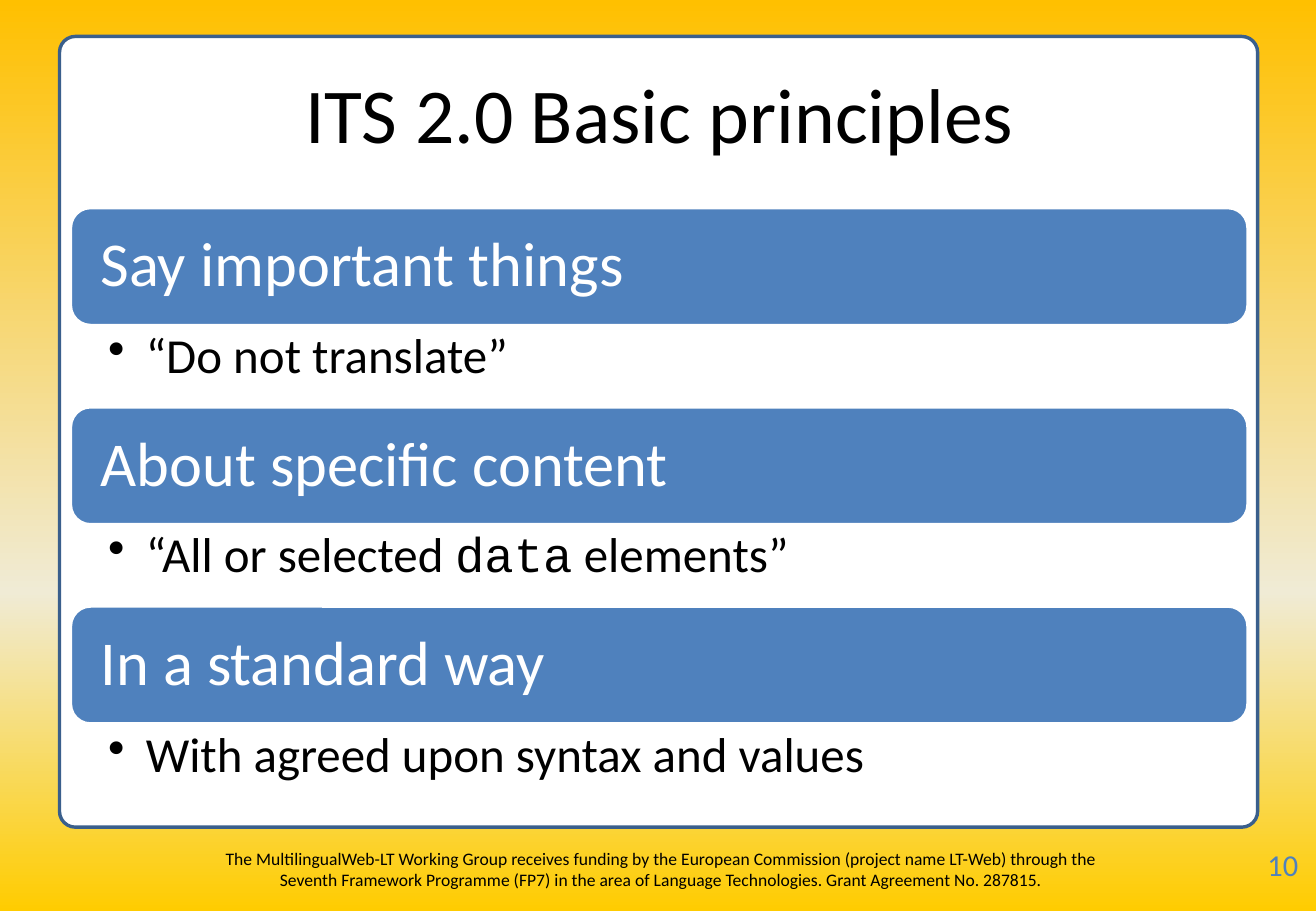
from lxml import etree
from pptx import Presentation
from pptx.dml.color import RGBColor
from pptx.enum.shapes import MSO_SHAPE
from pptx.enum.text import MSO_ANCHOR, PP_ALIGN
from pptx.oxml.ns import qn
from pptx.util import Pt

EMU_PER_PX = 9144
ROUNDED = MSO_SHAPE.ROUNDED_RECTANGLE
TOP, MIDDLE = MSO_ANCHOR.TOP, MSO_ANCHOR.MIDDLE
LEFT, CENTER = PP_ALIGN.LEFT, PP_ALIGN.CENTER
BODY_FONT, CODE_FONT = "Calibri", "Courier New"
COLORS = {
    "amber": "FFC000", "cream": "F0EBD5", "gold": "FFCC00", "white": "FFFFFF",
    "black": "000000", "blue": "4F81BD", "navy": "3A5F8C",
}
BACKGROUND_STOPS = [(0, "amber"), (65, "cream"), (100, "gold")]
FUNDING = (
    "The MultilingualWeb-LT Working Group receives funding by the European Commission "
    "(project name LT-Web) through the Seventh Framework Programme (FP7) in the area of "
    "Language Technologies. Grant Agreement No. 287815."
)
PRINCIPLES = [
    ("Say important things", [("“Do not translate”", BODY_FONT)]),
    ("About specific content", [
        ("“All or selected ", BODY_FONT), ("data", CODE_FONT), (" elements”", BODY_FONT),
    ]),
    ("In a standard way", [("With agreed upon syntax and values", BODY_FONT)]),
]


def px(length):
    """Turn px into EMU."""
    return length * EMU_PER_PX


def rgb(name):
    """Look up a named colour."""
    return RGBColor.from_string(COLORS[name])


def write_text(shape, runs, size, color="black", align=LEFT, anchor=TOP,
               insets=(10, 5, 10, 5), line_spacing=None, bullet_indent=0):
    """Fill a shape with one paragraph of (text, font) runs, or a plain string."""
    frame = shape.text_frame
    frame.word_wrap = True
    frame.vertical_anchor = anchor
    (frame.margin_left, frame.margin_top,
     frame.margin_right, frame.margin_bottom) = map(px, insets)
    paragraph = frame.paragraphs[0]
    paragraph.alignment = align
    if line_spacing:
        paragraph.line_spacing = line_spacing
    if bullet_indent:
        properties = paragraph._p.get_or_add_pPr()
        properties.set("marL", str(px(bullet_indent)))
        properties.set("indent", str(-px(bullet_indent)))
        etree.SubElement(properties, qn("a:buChar")).set("char", "•")
    if isinstance(runs, str):
        runs = [(runs, BODY_FONT)]
    for text, font_name in runs:
        run = paragraph.add_run()
        run.text = text
        run.font.name = font_name
        run.font.size = Pt(size)
        run.font.color.rgb = rgb(color)


def add_text(slide, box, runs, size, **text_format):
    """Add a text box."""
    write_text(slide.shapes.add_textbox(*map(px, box)), runs, size, **text_format)


def add_rounded_box(slide, box, fill, line, radius):
    """Add a filled rounded rectangle with a 2 pt outline."""
    shape = slide.shapes.add_shape(ROUNDED, *map(px, box))
    shape.shadow.inherit = False
    shape.adjustments[0] = radius
    shape.fill.solid()
    shape.fill.fore_color.rgb = rgb(fill)
    shape.line.color.rgb = rgb(line)
    shape.line.width = Pt(2)
    return shape


def paint_background(slide):
    """Give the slide its vertical gradient."""
    fill = slide.background.fill
    fill.gradient()
    fill.gradient_angle = 270
    stops = slide.element.find(".//" + qn("a:gsLst"))
    for stop in list(stops):
        stops.remove(stop)
    for percent, color in BACKGROUND_STOPS:
        stop = etree.SubElement(stops, qn("a:gs"), pos=str(percent * 1000))
        etree.SubElement(stop, qn("a:srgbClr"), val=COLORS[color])


def add_principles(slide, box):
    """Stack heading bars, each with its bullet below, at an equal pitch."""
    left, top, width, height = box
    pitch = height // len(PRINCIPLES)
    bar_height = 97
    for index, (heading, detail) in enumerate(PRINCIPLES):
        bar_top = top + index * pitch
        bar = add_rounded_box(slide, (left, bar_top, width, bar_height),
                              "blue", "white", 0.17)
        write_text(bar, heading, 37, color="white", anchor=MIDDLE,
                   insets=(20, 15, 20, 15), line_spacing=0.9)
        add_text(slide, (left, bar_top + bar_height, width, pitch - bar_height),
                 detail, 29, insets=(31, 5, 29, 5), line_spacing=0.9, bullet_indent=31)


def add_footer(slide, box):
    """Place the funding note and the page number."""
    left, top, width, height = box
    add_text(slide, (left + 162, top, 764, height), FUNDING, 10.4, align=CENTER)
    add_text(slide, (left + width - 42, top + 3, 42, height), "10", 18,
             color="blue", insets=(2, 1, 2, 1))


def main():
    """Build the slide and save it."""
    presentation = Presentation()
    presentation.slide_width, presentation.slide_height = px(1083), px(750)
    slide = presentation.slides.add_slide(presentation.slide_layouts[6])
    paint_background(slide)
    add_rounded_box(slide, (49, 30, 986, 651), "white", "navy", 0.02)
    add_footer(slide, (0, 693, 1083, 40))
    add_text(slide, (51, 30, 983, 125), "ITS 2.0 Basic principles", 46,
             align=CENTER, anchor=MIDDLE)
    add_principles(slide, (58, 171, 969, 492))
    presentation.save("out.pptx")


if __name__ == "__main__":
    main()
